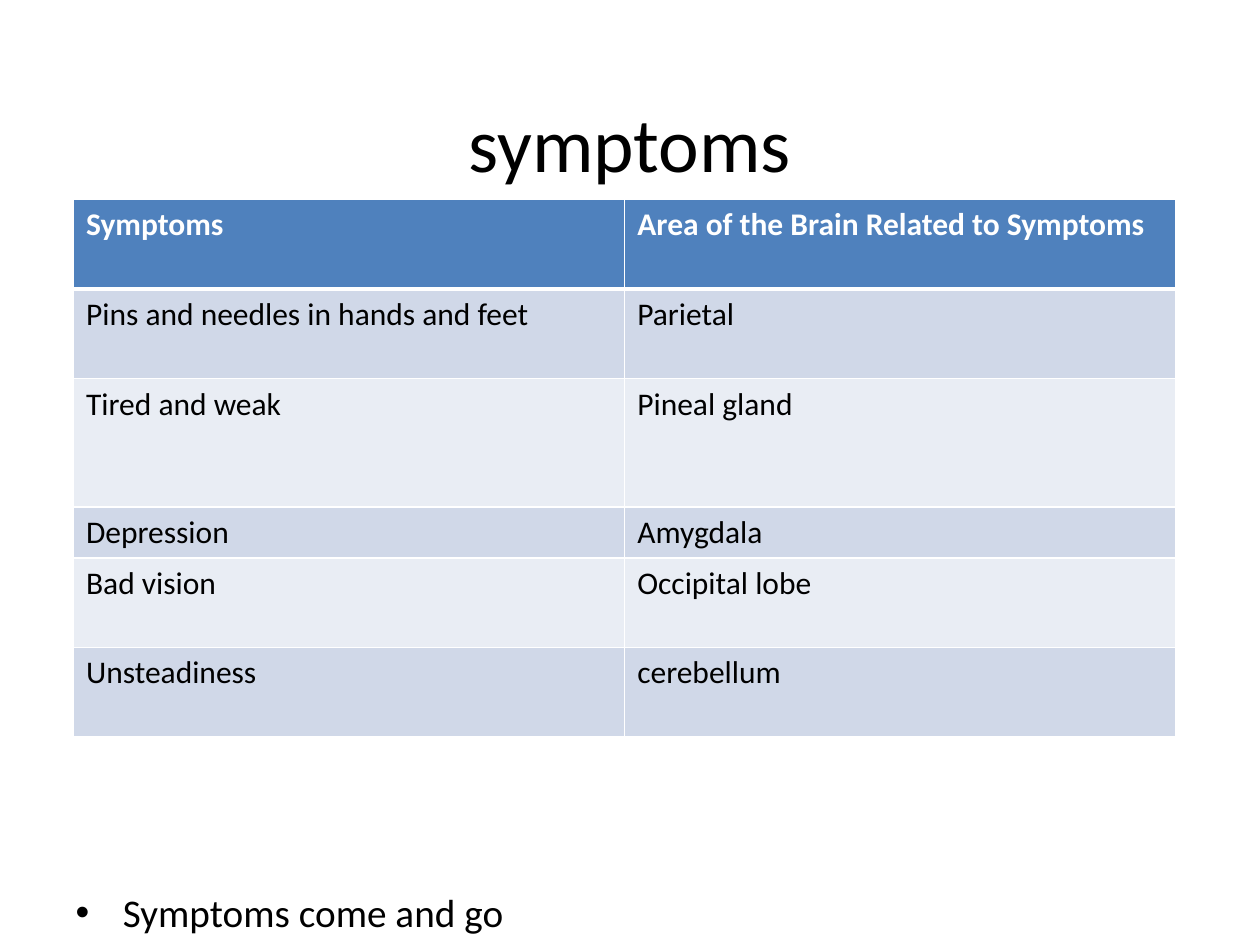
from lxml.etree import SubElement
from pptx import Presentation
from pptx.dml.color import RGBColor
from pptx.enum.text import MSO_ANCHOR as Anchor, MSO_AUTO_SIZE as AutoSize, PP_ALIGN as Align
from pptx.oxml.ns import qn
from pptx.util import Pt

COLORS = {
    "text": "000000",
    "white": "FFFFFF",
    "header": "4F81BD",
    "odd_row": "D0D8E8",
    "even_row": "E9EDF4",
}

SYMPTOM_ROWS = [
    ("Symptoms", "Area of the Brain Related to Symptoms", 51.2),
    ("Pins and needles in hands and feet", "Parietal", 51.2),
    ("Tired and weak", "Pineal gland", 73.2),
    ("Depression", "Amygdala", 29.2),
    ("Bad vision", "Occipital lobe", 51.2),
    ("Unsteadiness", "cerebellum", 51.2),
]


class SlideBuilder:
    """Holds the style and the current slide."""

    font = "Calibri"

    def __init__(self, slide):
        self.slide = slide

    def add_run(self, paragraph, text, size, color="text", bold=False):
        run = paragraph.add_run()
        run.text = text
        run.font.name = self.font
        run.font.size = Pt(size)
        run.font.bold = bold
        run.font.color.rgb = RGBColor.from_string(COLORS[color])

    def fill_placeholder(self, index, text, size, box, anchor, align):
        shape = self.slide.placeholders[index]
        shape.left, shape.top, shape.width, shape.height = (Pt(v) for v in box)
        frame = shape.text_frame
        frame.word_wrap = True
        frame.auto_size = AutoSize.NONE
        frame.vertical_anchor = anchor
        paragraph = frame.paragraphs[0]
        paragraph.alignment = align
        self.add_run(paragraph, text, size)

    def set_borders(self, cell, bottom=1):
        properties = cell._tc.get_or_add_tcPr()
        widths = {"a:lnL": 1, "a:lnR": 1, "a:lnT": 1, "a:lnB": bottom}
        for position, (tag, width) in enumerate(widths.items()):
            line = SubElement(properties, qn(tag), w=str(Pt(width)))
            fill = SubElement(line, qn("a:solidFill"))
            SubElement(fill, qn("a:srgbClr"), val=COLORS["white"])
            properties.insert(position, line)  # borders come before the fill

    def add_table(self, rows, left, top, column_width, size):
        height = sum(row[-1] for row in rows)
        frame = self.slide.shapes.add_table(
            len(rows), 2, Pt(left), Pt(top), Pt(2 * column_width), Pt(height))
        table = frame.table
        for column in table.columns:
            column.width = Pt(column_width)
        for row_index, (*texts, row_height) in enumerate(rows):
            table.rows[row_index].height = Pt(row_height)
            is_header = row_index == 0
            band = "header" if is_header else "odd_row" if row_index % 2 else "even_row"
            for column_index, text in enumerate(texts):
                cell = table.cell(row_index, column_index)
                cell.fill.solid()
                cell.fill.fore_color.rgb = RGBColor.from_string(COLORS[band])
                self.set_borders(cell, bottom=3 if is_header else 1)
                self.add_run(cell.text_frame.paragraphs[0], text, size,
                             "white" if is_header else "text", is_header)


def main():
    presentation = Presentation()
    presentation.slide_width, presentation.slide_height = Pt(720), Pt(540)
    slide = presentation.slides.add_slide(presentation.slide_layouts[1])
    builder = SlideBuilder(slide)

    # Title
    builder.fill_placeholder(0, "symptoms", 44, (36, 36, 648, 90),
                             Anchor.MIDDLE, Align.CENTER)

    # Bullet at the foot of the slide, below the table
    builder.fill_placeholder(1, "Symptoms come and go", 22.4, (36, 126, 648, 412),
                             Anchor.BOTTOM, Align.LEFT)

    # Symptoms and brain areas
    builder.add_table(SYMPTOM_ROWS, 42, 114, 315, 18)

    presentation.save("out.pptx")


if __name__ == "__main__":
    main()
